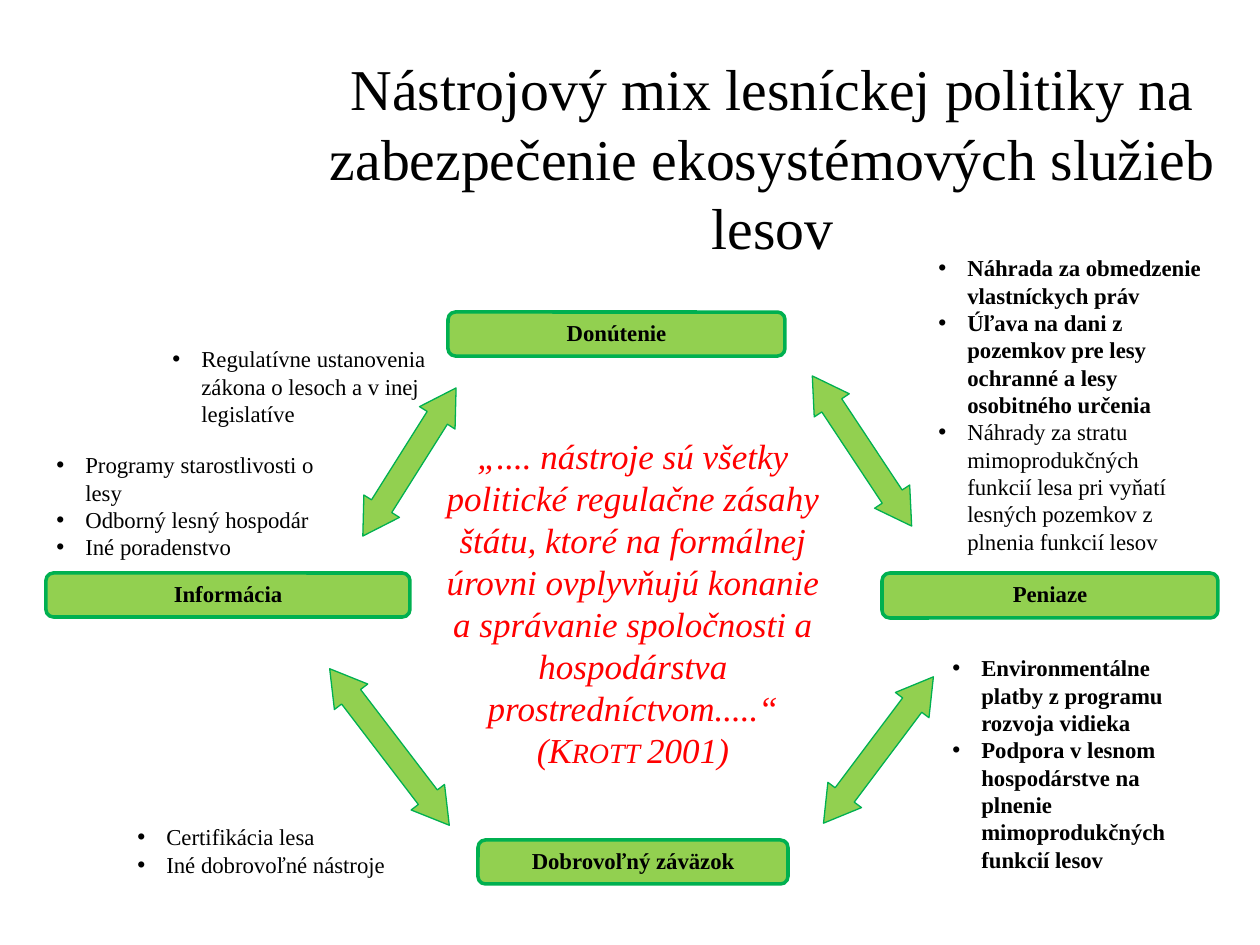
from typing import NamedTuple

from lxml import etree
from pptx import Presentation
from pptx.dml.color import RGBColor
from pptx.enum import shapes, text
from pptx.oxml import ns
from pptx.util import Pt

EMU = 914400 / 126  # one px
FONT = "Times New Roman"
BLACK = RGBColor(0x00, 0x00, 0x00)
RED = RGBColor(0xFF, 0x00, 0x00)
LIME = RGBColor(0x92, 0xD0, 0x50)
GREEN = RGBColor(0x00, 0xB0, 0x50)
MID = text.PP_ALIGN.CENTER


class Box(NamedTuple):
    x: int
    y: int
    w: int
    h: int


class Tool(NamedTuple):
    name: str
    box: Box


class Arrow(NamedTuple):
    box: Box
    turn: float


class Item(NamedTuple):
    words: str
    bold: bool = False


class Notes(NamedTuple):
    box: Box
    items: list[Item]
    wrap: bool = True


TOOLS = [
    Tool("Donútenie", Box(448, 312, 337, 44)),
    Tool("Peniaze", Box(882, 573, 336, 45)),
    Tool("Dobrovoľný záväzok", Box(478, 840, 310, 44)),
    Tool("Informácia", Box(46, 573, 364, 44)),
]

ARROWS = [
    Arrow(Box(772, 430, 180, 42), 56.5),
    Arrow(Box(787, 729, 183, 42), 306.9),
    Arrow(Box(291, 726, 197, 42), 52.6),
    Arrow(Box(322, 441, 175, 42), 302.2),
]

NOTES = [
    Notes(Box(926, 248, 290, 316), [
        Item("Náhrada za obmedzenie vlastníckych práv", True),
        Item("Úľava na dani z pozemkov pre lesy ochranné a lesy osobitného určenia", True),
        Item("Náhrady za stratu mimoprodukčných funkcií lesa pri vyňatí "
             "lesných pozemkov z plnenia funkcií lesov"),
    ]),
    Notes(Box(940, 648, 267, 233), [
        Item("Environmentálne platby z programu rozvoja vidieka", True),
        Item("Podpora v lesnom hospodárstve na plnenie mimoprodukčných funkcií lesov", True),
    ]),
    Notes(Box(125, 817, 276, 68), [
        Item("Certifikácia lesa"),
        Item("Iné dobrovoľné nástroje"),
    ], wrap=False),
    Notes(Box(44, 445, 301, 123), [
        Item("Programy starostlivosti o lesy"),
        Item("Odborný lesný hospodár"),
        Item("Iné poradenstvo"),
    ]),
    Notes(Box(160, 339, 281, 96), [
        Item("Regulatívne ustanovenia zákona o lesoch a v inej legislatíve"),
    ]),
]

TITLE = "Nástrojový mix lesníckej politiky na zabezpečenie ekosystémových služieb lesov"
QUOTE = ("„.... nástroje sú všetky politické regulačne zásahy štátu, ktoré na formálnej "
         "úrovni ovplyvňujú konanie a správanie spoločnosti a hospodárstva "
         "prostredníctvom.....“ (")


def px(n: float) -> int:
    return round(n * EMU)


def place(box: Box) -> list[int]:
    return [px(n) for n in box]


def write(para, words: str, size=13, color=BLACK, bold=False, italic=False, small=False):
    run = para.add_run()
    run.text = words
    font = run.font
    font.name, font.size = FONT, Pt(size)
    font.bold, font.italic = bold, italic
    font.color.rgb = color
    if small:
        font._element.set("cap", "small")


def dot(para) -> None:
    props = para._p.get_or_add_pPr()
    props.set("marL", str(px(29)))
    props.set("indent", str(-px(29)))
    etree.SubElement(props, ns.qn("a:buFont")).set("typeface", "Arial")
    etree.SubElement(props, ns.qn("a:buChar")).set("char", "•")


def frame(slide, box: Box, wrap=True):
    body = slide.shapes.add_textbox(*place(box)).text_frame
    body.word_wrap = wrap
    return body


def shape(slide, kind, box: Box, line: float):
    item = slide.shapes.add_shape(kind, *place(box))
    item.shadow.inherit = False
    item.fill.solid()
    item.fill.fore_color.rgb = LIME
    item.line.color.rgb = GREEN
    item.line.width = Pt(line)
    return item


def draw_tool(slide, tool: Tool) -> None:
    item = shape(slide, shapes.MSO_SHAPE.ROUNDED_RECTANGLE, tool.box, 2)
    item.adjustments[0] = 0.17
    body = item.text_frame
    body.vertical_anchor = text.MSO_ANCHOR.MIDDLE
    body.margin_left = body.margin_right = px(10)
    body.margin_top = body.margin_bottom = px(10)
    para = body.paragraphs[0]
    para.alignment, para.line_spacing = MID, 0.9
    write(para, tool.name, bold=True)


def draw_arrow(slide, arrow: Arrow) -> None:
    item = shape(slide, shapes.MSO_SHAPE.LEFT_RIGHT_ARROW, arrow.box, 0.75)
    item.adjustments[0], item.adjustments[1] = 0.57, 0.84
    item.rotation = arrow.turn


def draw_notes(slide, notes: Notes) -> None:
    body = frame(slide, notes.box, notes.wrap)
    for i, item in enumerate(notes.items):
        para = body.add_paragraph() if i else body.paragraphs[0]
        dot(para)
        write(para, item.words, bold=item.bold)


def main() -> None:
    deck = Presentation()
    deck.slide_width, deck.slide_height = px(1260), px(945)
    slide = deck.slides.add_slide(deck.slide_layouts[6])

    # Title
    para = frame(slide, Box(263, 47, 1019, 118)).paragraphs[0]
    para.alignment = MID
    write(para, TITLE, size=33)

    # Ring of policy tools
    for tool in TOOLS:
        draw_tool(slide, tool)
    for arrow in ARROWS:
        draw_arrow(slide, arrow)

    # Examples beside each tool
    for notes in NOTES:
        draw_notes(slide, notes)

    # Quote in the centre
    para = frame(slide, Box(425, 428, 416, 352)).paragraphs[0]
    para.alignment = MID
    for words, small in ((QUOTE, False), ("Krott ", True), ("2001)", False)):
        write(para, words, size=20, color=RED, italic=True, small=small)

    deck.save("out.pptx")


if __name__ == "__main__":
    main()
